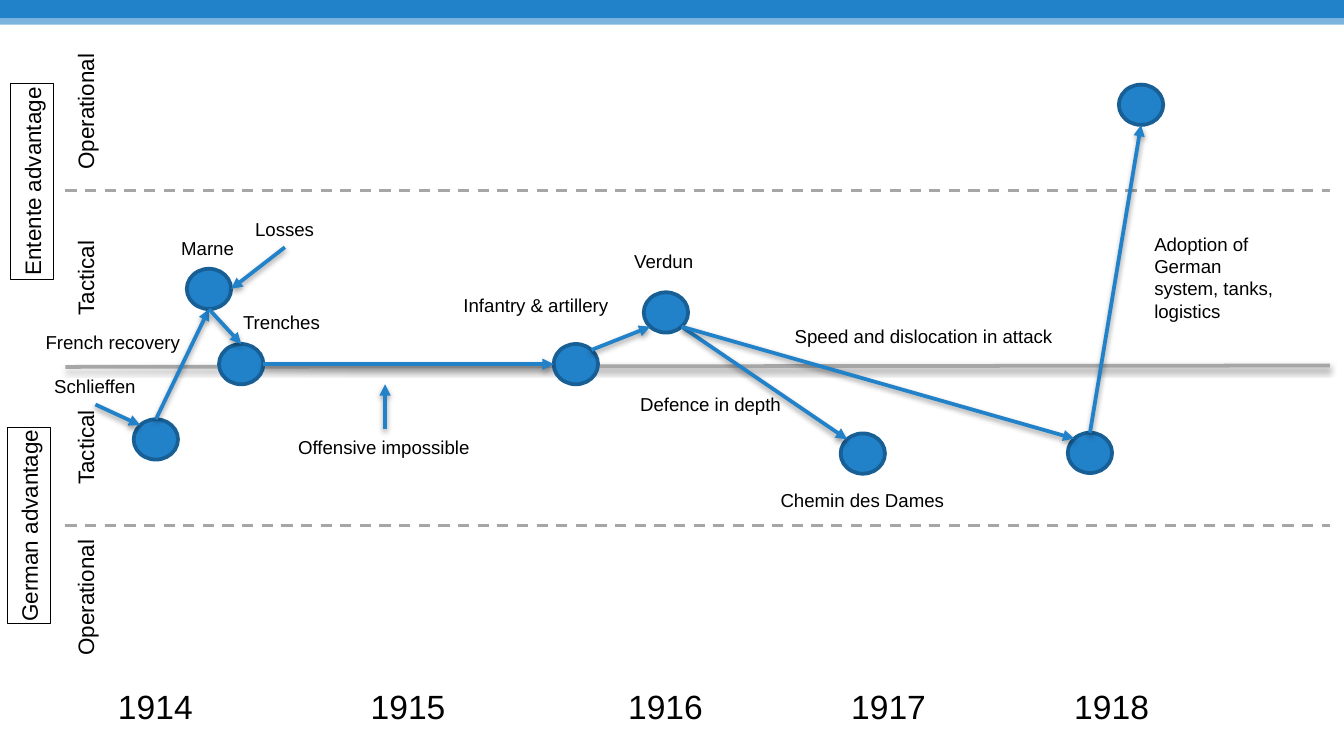
from dataclasses import dataclass
from math import cos, radians, sin

from lxml import etree
from pptx import Presentation
from pptx.dml.color import RGBColor
from pptx.enum.dml import MSO_LINE
from pptx.enum.shapes import MSO_CONNECTOR, MSO_SHAPE
from pptx.enum.text import MSO_ANCHOR, MSO_AUTO_SIZE, PP_ALIGN
from pptx.oxml.ns import qn
from pptx.util import Inches, Pt

RECTANGLE, OVAL = MSO_SHAPE.RECTANGLE, MSO_SHAPE.OVAL
STRAIGHT, DASH = MSO_CONNECTOR.STRAIGHT, MSO_LINE.DASH
CENTER, MIDDLE = PP_ALIGN.CENTER, MSO_ANCHOR.MIDDLE
GROW = MSO_AUTO_SIZE.SHAPE_TO_FIT_TEXT

COLUMNS, ROWS = 100, 56.25
CELL = Inches(0.1)


@dataclass(frozen=True)
class Theme:
    blue: str = "2181C9"
    rim: str = "185F95"
    grey: str = "A6A6A6"
    ink: str = "000000"
    paper: str = "FFFFFF"
    font: str = "Arial"
    note: int = 10
    axis: int = 12
    year: int = 18
    stroke: float = 2
    dash: float = 1.5
    frame: float = 0.5


THEME = Theme()
LABEL_ROWS = {THEME.note: 2.7, THEME.axis: 3, THEME.year: 4}
EVENT_COLUMNS, EVENT_ROWS = 3.3, 3
DIRECTIONS = {"right": 0, "lower right": 45, "bottom": 90, "lower left": 135,
              "left": 180, "upper left": 225, "top": 270, "upper right": 315}

EVENTS = {
    "schlieffen": (11.6, 32.7),
    "marne": (15.55, 21.5),
    "trenches": (17.95, 27.1),
    "artillery": (42.85, 27.1),
    "verdun": (49.55, 23.25),
    "chemin": (64.2, 33.75),
    "spring": (81.1, 33.7),
    "victory": (84.9, 7.8),
}
LINKS = [
    ("schlieffen", "top", "marne", "bottom"),
    ("marne", "bottom", "trenches", "top"),
    ("trenches", "right", "artillery", "left"),
    ("artillery", "upper right", "verdun", "lower left"),
    ("verdun", "lower right", "chemin", "upper left"),
    ("verdun", "lower right", "spring", "upper left"),
    ("spring", "top", "victory", "bottom"),
]
NOTES = [
    ("Schlieffen", 3.05, 27.4, 8.1),
    ("French recovery", 2.4, 24.15, 12.1),
    ("Trenches", 17.1, 22.65, 7.8),
    ("Marne", 12.5, 17.15, 6),
    ("Losses", 18, 15.7, 6.4),
    ("Offensive impossible", 21.2, 31.95, 14.9),
    ("Infantry & artillery", 33.5, 21.4, 12.9),
    ("Verdun", 46.2, 18.1, 6.5),
    ("Defence in depth", 46.65, 28.75, 12.5),
    ("Chemin des Dames", 57.1, 35.9, 14.3),
    ("Speed and dislocation in attack", 58.15, 23.7, 21.3),
]
LEVELS = [("Operational", 8.25, 10.7), ("Tactical", 20.65, 7.6),
          ("Tactical", 33.25, 7.6), ("Operational", 44.4, 10.7)]
SIDES = [("German advantage", 2.15, 39.1), ("Entente advantage", 2.4, 13.5)]
YEARS = [("1914", 11.6), ("1915", 30.4), ("1916", 49.55),
         ("1917", 66.15), ("1918", 82.75)]


def cells(*counts):
    return [round(count * CELL) for count in counts]


def color(value):
    return RGBColor.from_string(value)


def add_block(slide, kind, left, top, width, height, fill, rim=None, weight=0):
    block = slide.shapes.add_shape(kind, *cells(left, top, width, height))
    block.shadow.inherit = False
    block.fill.solid()
    block.fill.fore_color.rgb = color(fill)
    if rim:
        block.line.color.rgb = color(rim)
        block.line.width = Pt(weight)
    else:
        block.line.fill.background()
    return block


def write(holder, text, size, wrap=False):
    frame = holder.text_frame
    frame.word_wrap = wrap
    frame.text = text
    font = frame.paragraphs[0].runs[0].font
    font.name, font.size = THEME.font, Pt(size)
    font.color.rgb = color(THEME.ink)
    return frame


def add_label(slide, text, left, top, width, size, rotation=0, height=None):
    rows = height or LABEL_ROWS[size]
    label = slide.shapes.add_textbox(*cells(left, top, width, rows))
    label.rotation = rotation
    write(label, text, size, wrap=height is not None).auto_size = GROW


def add_side(slide, text, x, y):
    width, height = 14.6, 3.2
    side = add_block(slide, RECTANGLE, x - width / 2, y - height / 2,
                     width, height, THEME.paper, THEME.ink, THEME.frame)
    side.rotation = 270
    frame = write(side, text, THEME.axis)
    frame.vertical_anchor = MIDDLE
    frame.paragraphs[0].alignment = CENTER


def add_line(slide, start, end, ink, weight, dash=None, arrow=False, shadow=True):
    line = slide.shapes.add_connector(STRAIGHT, *cells(*start, *end))
    line.line.color.rgb = color(ink)
    line.line.width = Pt(weight)
    if dash:
        line.line.dash_style = dash
    properties = line._element.spPr
    if arrow:
        etree.SubElement(properties.find(qn("a:ln")), qn("a:tailEnd"), type="triangle")
    effects = etree.SubElement(properties, qn("a:effectLst"))
    if shadow:
        cast = etree.SubElement(effects, qn("a:outerShdw"), blurRad=str(Pt(3.1)),
                                dist=str(Pt(1.6)), dir="5400000", rotWithShape="0")
        shade = etree.SubElement(cast, qn("a:srgbClr"), val=THEME.ink)
        etree.SubElement(shade, qn("a:alpha"), val="38000")


def add_arrow(slide, start, end):
    add_line(slide, start, end, THEME.blue, THEME.stroke, arrow=True)


def event_edge(event, direction):
    x, y = EVENTS[event]
    angle = radians(DIRECTIONS[direction])
    return x + EVENT_COLUMNS / 2 * cos(angle), y + EVENT_ROWS / 2 * sin(angle)


def note_edge(text, below=True):
    left, top, width = next(note[1:] for note in NOTES if note[0] == text)
    return left + width / 2, top + LABEL_ROWS[THEME.note] * below


def add_header(slide):
    add_block(slide, RECTANGLE, 0, 0, COLUMNS, 1.33, THEME.blue)
    strip = add_block(slide, RECTANGLE, 0, 1.33, COLUMNS, 0.5, THEME.blue)
    tint = strip._element.spPr.find(qn("a:solidFill"))[0]
    etree.SubElement(tint, qn("a:alpha"), val="60000")


def add_scale(slide):
    left, right = 4.87, 98.95
    add_line(slide, (left, 27.3), (right, 27.2), THEME.grey, THEME.stroke)
    for row in (14.15, 39.1):
        add_line(slide, (left, row), (right, row), THEME.grey, THEME.dash,
                 dash=DASH, shadow=False)
    for side in SIDES:
        add_side(slide, *side)
    for text, middle, length in LEVELS:
        add_label(slide, text, 6.35 - length / 2,
                  middle - LABEL_ROWS[THEME.axis] / 2, length, THEME.axis, 270)
    for year, middle in YEARS:
        add_label(slide, year, middle - 3.8, 50.55, 7.6, THEME.year)


def add_story(slide):
    for x, y in EVENTS.values():
        add_block(slide, OVAL, x - EVENT_COLUMNS / 2, y - EVENT_ROWS / 2,
                  EVENT_COLUMNS, EVENT_ROWS, THEME.blue, THEME.rim, THEME.stroke)
    for origin, leaving, target, arriving in LINKS:
        add_arrow(slide, event_edge(origin, leaving), event_edge(target, arriving))
    add_arrow(slide, note_edge("Schlieffen"), event_edge("schlieffen", "upper left"))
    add_arrow(slide, note_edge("Losses"), event_edge("marne", "right"))
    stalemate = note_edge("Offensive impossible", below=False)
    add_arrow(slide, stalemate, (stalemate[0], 28.6))
    for note in NOTES:
        add_label(slide, *note, THEME.note)
    add_label(slide, "Adoption of German system, tanks, logistics",
              84.9, 16.8, 11.4, THEME.note, height=7.7)


def main():
    deck = Presentation()
    deck.slide_width, deck.slide_height = cells(COLUMNS, ROWS)
    slide = deck.slides.add_slide(deck.slide_layouts[6])
    add_header(slide)
    add_scale(slide)
    add_story(slide)
    deck.save("out.pptx")


if __name__ == "__main__":
    main()
